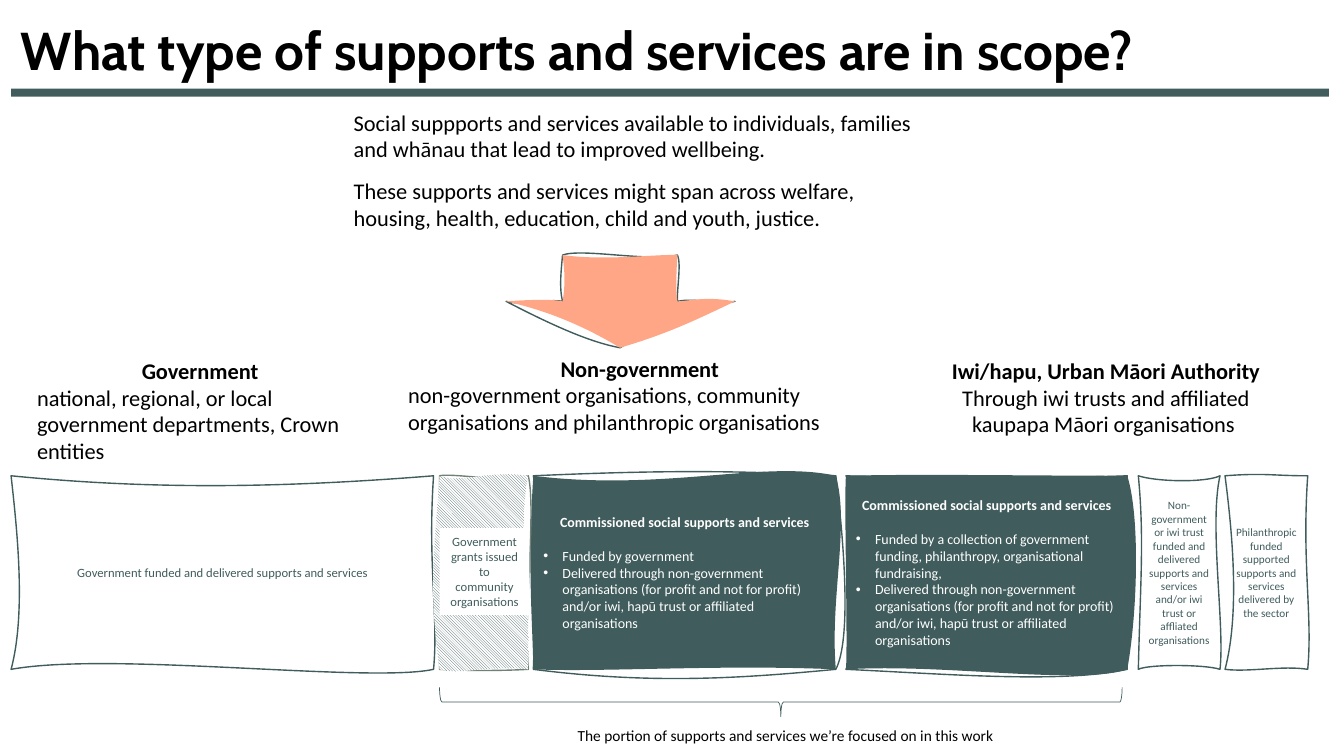
import copy

import pptx
import pptx.util
from lxml import etree
from pptx.dml.color import RGBColor
from pptx.enum.dml import MSO_PATTERN
from pptx.enum.shapes import MSO_SHAPE
from pptx.enum.text import MSO_ANCHOR, MSO_AUTO_SIZE, PP_ALIGN
from pptx.oxml.ns import qn

PX = 9144  # EMU, 100 px to the inch
TEAL, CORAL, SLATE, WHITE, BLACK = "405C5C", "FFA687", "708276", "FFFFFF", "000000"
PANEL_TOP, PANEL_BOTTOM = 472, 664
CENTER, LEFT = PP_ALIGN.CENTER, PP_ALIGN.LEFT


def rgb(hex_color):
    return RGBColor.from_string(hex_color)


def style(shape, fill=None, line=None, width=1):
    shape.shadow.inherit = False
    if fill:
        shape.fill.solid()
        shape.fill.fore_color.rgb = rgb(fill)
    else:
        shape.fill.background()
    if line:
        shape.line.color.rgb = rgb(line)
        shape.line.width = pptx.util.Pt(width)
    else:
        shape.line.fill.background()


def add_bullet(paragraph):
    properties = paragraph._p.get_or_add_pPr()
    properties.set("marL", str(19 * PX))
    properties.set("indent", str(-19 * PX))
    etree.SubElement(properties, qn("a:buFont")).set("typeface", "Arial")
    etree.SubElement(properties, qn("a:buChar")).set("char", "•")


def write(frame, lines, size, color=BLACK, font="Calibri"):
    """Fill a frame with lines given as (text, alignment, bold, bulleted)."""
    frame.word_wrap = True
    for index, (text, alignment, bold, bulleted) in enumerate(lines):
        paragraph = frame.add_paragraph() if index else frame.paragraphs[0]
        paragraph.text = text
        paragraph.alignment = alignment
        if bulleted:
            add_bullet(paragraph)
            if not lines[index - 1][3]:
                paragraph.space_before = pptx.util.Pt(12)
        paragraph.font.size = pptx.util.Pt(size)
        paragraph.font.name = font
        paragraph.font.bold = bold
        paragraph.font.color.rgb = rgb(color)


def text_box(slide, box, lines, size=16, font="Calibri"):
    frame = slide.shapes.add_textbox(*(v * PX for v in box)).text_frame
    write(frame, lines, size, font=font)
    frame.auto_size = MSO_AUTO_SIZE.SHAPE_TO_FIT_TEXT


def preset(slide, kind, box, **look):
    shape = slide.shapes.add_shape(kind, *(v * PX for v in box))
    style(shape, **look)
    return shape


def bend_sides(path, corners, controls):
    """Turn the straight sides of a path into curves with two control points each."""
    left, top = (min(values) for values in zip(*corners))
    sides = path.findall(qn("a:lnTo"))
    for side, bend, end in zip(sides, controls, corners[1:] + corners[:1]):
        curve = etree.Element(qn("a:cubicBezTo"))
        for x, y in (bend[:2], bend[2:], end):
            point = etree.SubElement(curve, qn("a:pt"))
            point.set("x", str(x - left))
            point.set("y", str(y - top))
        path.replace(side, curve)


def sketch(slide, corners, outline, body=None, **look):
    """Hand-drawn shape; with a body, the line follows the outline and the fill the body."""
    builder = slide.shapes.build_freeform(*corners[0], scale=PX)
    builder.add_line_segments(corners[1:] + corners[:1], close=True)
    shape = builder.convert_to_shape()
    style(shape, **look)
    path = next(shape._element.iter(qn("a:path")))
    if body:
        fill_path = copy.deepcopy(path)
        path.addnext(fill_path)
        path.set("fill", "none")
        fill_path.set("stroke", "0")
        bend_sides(fill_path, corners, body)
    bend_sides(path, corners, outline)
    return shape


def panel(slide, left, right, outline, body=None, **look):
    corners = [(left, PANEL_TOP), (right, PANEL_TOP),
               (right, PANEL_BOTTOM), (left, PANEL_BOTTOM)]
    shape = sketch(slide, corners, outline, body, **look)
    shape.text_frame.vertical_anchor = MSO_ANCHOR.MIDDLE
    return shape


def open_panel(slide, left, right, outline, text, size):
    shape = panel(slide, left, right, outline, line=TEAL)
    write(shape.text_frame, [(text, CENTER, False, False)], size, TEAL)


def commissioned_panel(slide, left, right, outline, body, funding):
    shape = panel(slide, left, right, outline, body, fill=TEAL, line=TEAL)
    delivery = ("Delivered through non-government organisations (for profit and not "
                "for profit) and/or iwi, hapū trust or affiliated organisations")
    write(shape.text_frame, [
        ("Commissioned social supports and services", CENTER, True, False),
        (funding, LEFT, False, True),
        (delivery, LEFT, False, True)], 10, WHITE)


def arrow(slide):
    corners = [(502, 299), (558, 299), (558, 253), (672, 253),
               (672, 299), (729, 299), (615, 345)]
    outline = [
        (526, 304, 541, 296), (555, 287, 556, 274), (578, 246, 643, 260),
        (676, 262, 671, 289), (690, 295, 710, 303), (691, 305, 647, 325),
        (588, 340, 554, 326)]
    body = [
        (528, 297, 551, 297), (561, 282, 560, 268), (600, 259, 651, 252),
        (671, 264, 670, 292), (688, 298, 701, 294), (687, 319, 662, 331),
        (567, 316, 528, 305)]
    sketch(slide, corners, outline, body, fill=CORAL, line=TEAL)


def grants_panel(slide):
    hatching = panel(
        slide, 436, 524,
        [(449, 469, 499, 479), (532, 506, 519, 607), (508, 665, 473, 666), (435, 579, 436, 510)],
        [(455, 480, 486, 466), (513, 522, 527, 597), (480, 660, 457, 670), (425, 582, 430, 557)],
        line=SLATE)
    hatching.fill.patterned()
    hatching.fill.pattern = MSO_PATTERN.DARK_DOWNWARD_DIAGONAL
    hatching.fill.fore_color.rgb = rgb(TEAL)
    hatching.fill.back_color.rgb = rgb(WHITE)


def main():
    deck = pptx.Presentation()
    deck.slide_width, deck.slide_height = 1333 * PX, 750 * PX
    slide = deck.slides.add_slide(deck.slide_layouts[6])

    preset(slide, MSO_SHAPE.RECTANGLE, (11, 88, 1307, 8), fill=TEAL)
    text_box(slide, (11, 12, 1276, 74), [
        ("What type of supports and services are in scope?", LEFT, True, False)], 38, "Cabin")
    for top, text in (
            (103, "Social suppports and services available to individuals, families "
                  "and whānau that lead to improved wellbeing."),
            (171, "These supports and services might span across welfare, housing, "
                  "health, education, child and youth, justice.")):
        text_box(slide, (341, top, 588, 64), [(text, LEFT, False, False)])
    arrow(slide)

    for box, sector, alignment, detail in (
            ((27, 349, 343, 118), "Government", LEFT,
             "national, regional, or local government departments, Crown entities"),
            ((395, 347, 479, 91), "Non-government", LEFT,
             "non-government organisations, community organisations and "
             "philanthropic organisations"),
            ((907, 349, 380, 91), "Iwi/hapu, Urban Māori Authority", CENTER,
             "Through iwi trusts and affiliated kaupapa Māori organisations ")):
        text_box(slide, box, [(sector, CENTER, True, False),
                              (detail, alignment, False, False)])

    open_panel(slide, 11, 430, [
        (142, 485, 268, 485), (424, 560, 435, 610), (366, 678, 111, 646), (26, 608, 17, 526)],
        "Government funded and delivered supports and services", 9)
    commissioned_panel(
        slide, 529, 829,
        [(662, 466, 737, 467), (838, 545, 844, 635), (735, 673, 646, 679), (532, 579, 541, 532)],
        [(658, 488, 758, 456), (843, 521, 823, 593), (714, 659, 598, 667), (528, 611, 523, 562)],
        "Funded by government")
    open_panel(slide, 1215, 1297, [
        (1254, 469, 1263, 472), (1291, 559, 1302, 610),
        (1272, 660, 1239, 667), (1230, 607, 1222, 526)],
        "Philanthropic funded supported supports and services delivered by the sector", 8)
    open_panel(slide, 1129, 1210, [
        (1147, 478, 1196, 479), (1199, 521, 1215, 621),
        (1195, 659, 1138, 659), (1131, 577, 1135, 535)],
        "Non-government or iwi trust funded and delivered supports and services "
        "and/or iwi trust or affliated organisations", 8)
    commissioned_panel(
        slide, 839, 1118,
        [(912, 475, 1076, 474), (1106, 554, 1114, 590), (1053, 678, 944, 669), (852, 638, 856, 492)],
        [(907, 470, 1023, 472), (1131, 513, 1128, 609), (1069, 680, 937, 658), (841, 639, 837, 494)],
        "Funded by a collection of government funding, philanthropy, "
        "organisational fundraising,")
    grants_panel(slide)

    brace = preset(slide, MSO_SHAPE.LEFT_BRACE, (760, 358, 29, 677), line=TEAL, width=0.5)
    brace.rotation = 270
    text_box(slide, (563, 715, 453, 29), [
        ("The portion of supports and services we’re focused on in this work",
         LEFT, False, False)], 11)
    grants = preset(slide, MSO_SHAPE.RECTANGLE, (436, 524, 89, 86), fill=WHITE)
    write(grants.text_frame, [("Government grants issued to community organisations",
                               CENTER, False, False)], 9, TEAL)
    deck.save("out.pptx")


if __name__ == "__main__":
    main()
